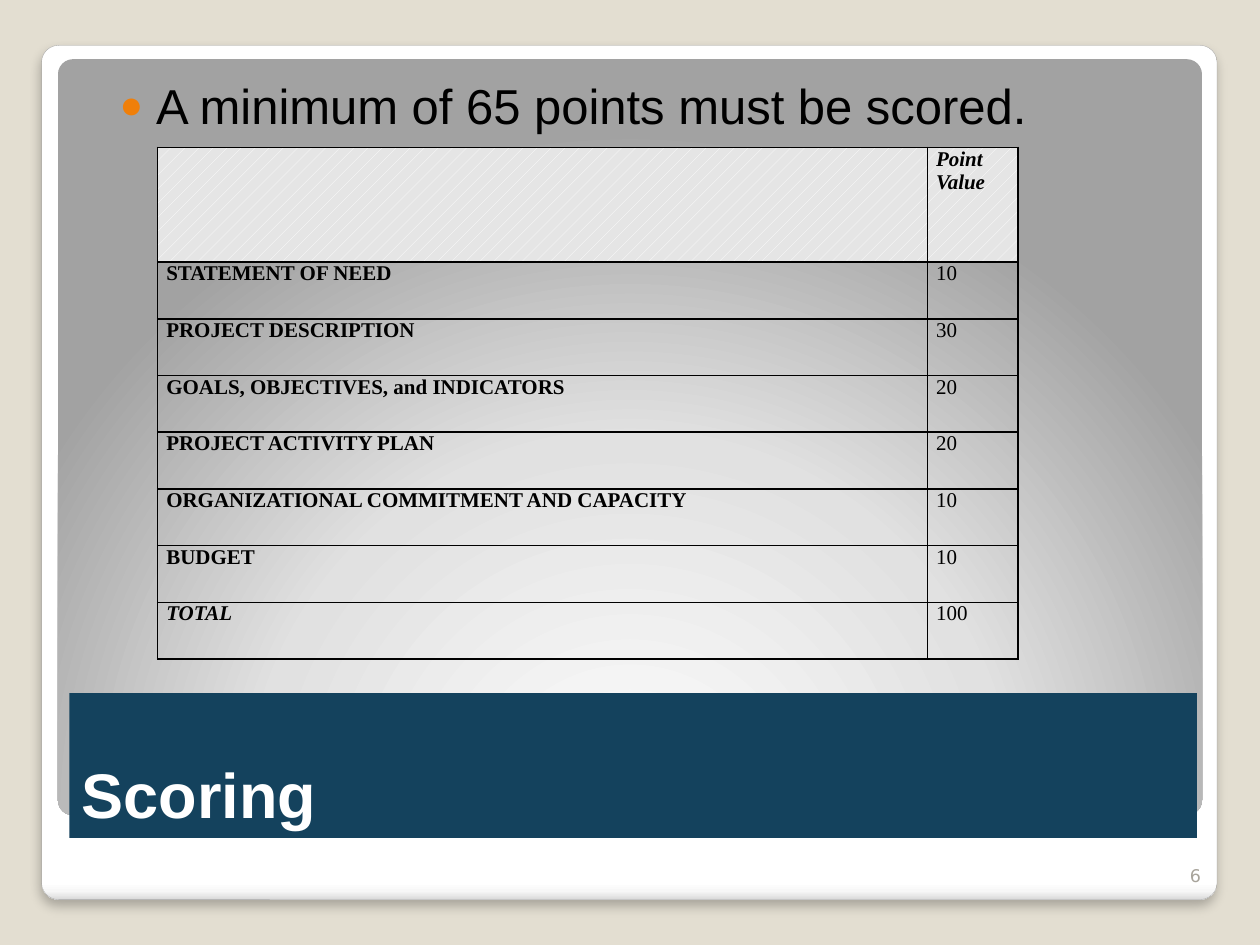
from dataclasses import dataclass
from typing import Optional

from lxml.etree import SubElement
from pptx import Presentation
from pptx.dml.color import RGBColor
from pptx.enum.dml import MSO_PATTERN
from pptx.enum.shapes import MSO_SHAPE
from pptx.enum.text import MSO_ANCHOR, PP_ALIGN
from pptx.oxml import parse_xml
from pptx.oxml.ns import nsdecls, qn
from pptx.util import Inches, Pt

BLACK = "000000"
WHITE = "FFFFFF"


@dataclass
class Panel:
    box: tuple[float, float, float, float]
    stops: list[tuple[int, str]]
    direction: str
    outline: Optional[str] = None
    shadowed: bool = False


@dataclass
class Criterion:
    label: str
    points: str
    italic: bool = False


PANELS = [
    Panel((0.33, 0.36, 9.33, 6.78),
          [(0, WHITE), (98, WHITE), (99, "F7F7F7"), (100, "DADADA")],
          '<a:lin ang="5400000" scaled="0"/>', "A4A4A4", True),
    Panel((0.46, 0.47, 9.08, 6),
          [(0, WHITE), (55, "E1E1E1"), (100, "A2A2A2")],
          '<a:path path="circle"><a:fillToRect l="50000" t="175000" '
          'r="50000" b="-75000"/></a:path>'),
]
CRITERIA = [
    Criterion("STATEMENT OF NEED", "10"),
    Criterion("PROJECT DESCRIPTION", "30"),
    Criterion("GOALS, OBJECTIVES, and INDICATORS", "20"),
    Criterion("PROJECT ACTIVITY PLAN", "20"),
    Criterion("ORGANIZATIONAL COMMITMENT AND CAPACITY", "10"),
    Criterion("BUDGET", "10"),
    Criterion("TOTAL", "100", italic=True),
]


def color(value: str) -> RGBColor:
    return RGBColor.from_string(value)


def apply(target, formats: dict) -> None:
    for attribute, value in formats.items():
        setattr(target, attribute, value)


def place(shape, box: tuple) -> None:
    apply(shape, dict(zip(("left", "top", "width", "height"), map(Inches, box))))


def write(frame, text: str, ink: str, font: dict, layout: dict):
    paragraph = frame.paragraphs[0]
    apply(paragraph, layout)
    run = paragraph.add_run()
    run.text = text
    apply(run.font, font)
    run.font.color.rgb = color(ink)
    return paragraph


def add_panel(slide, panel: Panel) -> None:
    shape = slide.shapes.add_shape(
        MSO_SHAPE.ROUNDED_RECTANGLE, *map(Inches, panel.box))
    shape.adjustments[0] = 0.02
    shape.shadow.inherit = False
    shape.fill.background()
    properties = shape.element.spPr
    stops = "".join(
        f'<a:gs pos="{position * 1000}"><a:srgbClr val="{tone}"/></a:gs>'
        for position, tone in panel.stops)
    gradient = parse_xml(
        f'<a:gradFill {nsdecls("a")} rotWithShape="1"><a:gsLst>{stops}</a:gsLst>'
        f'{panel.direction}</a:gradFill>')
    properties.replace(properties.find(qn("a:noFill")), gradient)
    if panel.outline:
        shape.line.color.rgb = color(panel.outline)
        shape.line.width = Pt(0.16)
    else:
        shape.line.fill.background()
    if panel.shadowed:
        properties.find(qn("a:effectLst")).append(parse_xml(
            f'<a:outerShdw {nsdecls("a")} blurRad="{Pt(6)}" dist="{Pt(4)}" '
            'dir="5400000" algn="t" rotWithShape="0"><a:srgbClr val="000000">'
            '<a:alpha val="25000"/></a:srgbClr></a:outerShdw>'))
    slide.shapes.title.element.addprevious(shape.element)


def add_title(slide) -> None:
    title = slide.shapes.title
    place(title, (0.55, 5.5, 8.95, 1.15))
    title.fill.solid()
    title.fill.fore_color.rgb = color("14425D")
    apply(title.text_frame, {"vertical_anchor": MSO_ANCHOR.BOTTOM, "word_wrap": True})
    write(title.text_frame, "Scoring", WHITE,
          {"name": "Arial", "size": Pt(36), "bold": True},
          {"alignment": PP_ALIGN.LEFT})


def add_requirement(slide) -> None:
    requirement = slide.shapes.add_textbox(*map(Inches, (0.75, 0.5, 8.5, 0.75)))
    apply(requirement.text_frame, {
        "word_wrap": True, "margin_left": Inches(0.2), "margin_top": Inches(0.1)})
    paragraph = write(
        requirement.text_frame, "A minimum of 65 points must be scored.", BLACK,
        {"name": "Arial", "size": Pt(28)}, {"space_before": Pt(2.5)})
    properties = paragraph._p.get_or_add_pPr()
    properties.set("marL", str(Inches(0.29)))
    properties.set("indent", str(Inches(-0.29)))
    bullet_color = SubElement(properties, qn("a:buClr"))
    SubElement(bullet_color, qn("a:srgbClr"), val="F07F09")
    SubElement(properties, qn("a:buSzPct"), val="80000")
    SubElement(properties, qn("a:buFont"), typeface="Arial")
    SubElement(properties, qn("a:buChar"), char="●")


def draw_borders(cell) -> None:
    properties = cell._tc.get_or_add_tcPr()
    for position, side in enumerate(("lnL", "lnR", "lnT", "lnB")):
        properties.insert(position, parse_xml(
            f'<a:{side} {nsdecls("a")} w="{Pt(1)}"><a:solidFill>'
            f'<a:srgbClr val="{BLACK}"/></a:solidFill></a:{side}>'))


def fill_cell(cell, text: str, font: dict, layout: dict, header: bool = False) -> None:
    apply(cell, {"margin_left": Inches(0.07), "margin_right": Inches(0.07),
                 "margin_top": 0, "margin_bottom": 0})
    if header:
        cell.fill.patterned()
        cell.fill.pattern = MSO_PATTERN.PERCENT_10
        cell.fill.fore_color.rgb = color(WHITE)
        cell.fill.back_color.rgb = color("E5E5E5")
    else:
        cell.fill.background()
    draw_borders(cell)
    if text:
        write(cell.text_frame, text, BLACK,
              {"name": "Times New Roman", "size": Pt(12), **font}, layout)


def add_scores(slide) -> None:
    scores = slide.shapes.add_table(
        len(CRITERIA) + 1, 2, *map(Inches, (1.25, 1.17, 6.83, 4.08))).table
    apply(scores, {"first_row": False, "horz_banding": False})
    for column, width in zip(scores.columns, (6.11, 0.72)):
        column.width = Inches(width)
    for index, row in enumerate(scores.rows):
        row.height = Inches(0.45 if index else 0.91)
    for column, heading in enumerate(("", "Point Value")):
        fill_cell(scores.cell(0, column), heading,
                  {"bold": True, "italic": True}, {}, header=True)
    spacing = {"space_before": Pt(3)}
    for row, criterion in enumerate(CRITERIA, start=1):
        fill_cell(scores.cell(row, 0), criterion.label,
                  {"bold": True, "italic": criterion.italic},
                  {"alignment": PP_ALIGN.JUSTIFY, **spacing})
        fill_cell(scores.cell(row, 1), criterion.points, {"bold": False}, spacing)


def add_page_number(slide) -> None:
    page_number = slide.shapes.add_textbox(*map(Inches, (9.13, 6.68, 0.5, 0.4)))
    apply(page_number.text_frame,
          {"word_wrap": True, "vertical_anchor": MSO_ANCHOR.BOTTOM})
    write(page_number.text_frame, "6", "A8A49B",
          {"name": "DejaVu Sans", "size": Pt(10)}, {"alignment": PP_ALIGN.RIGHT})


def main() -> None:
    deck = Presentation()
    apply(deck, {"slide_width": Inches(10), "slide_height": Inches(7.5)})
    slide = deck.slides.add_slide(deck.slide_layouts[5])
    slide.background.fill.solid()
    slide.background.fill.fore_color.rgb = color("E3DED1")
    for panel in PANELS:
        add_panel(slide, panel)
    add_title(slide)
    add_requirement(slide)
    add_scores(slide)
    add_page_number(slide)
    deck.save("out.pptx")


if __name__ == "__main__":
    main()
